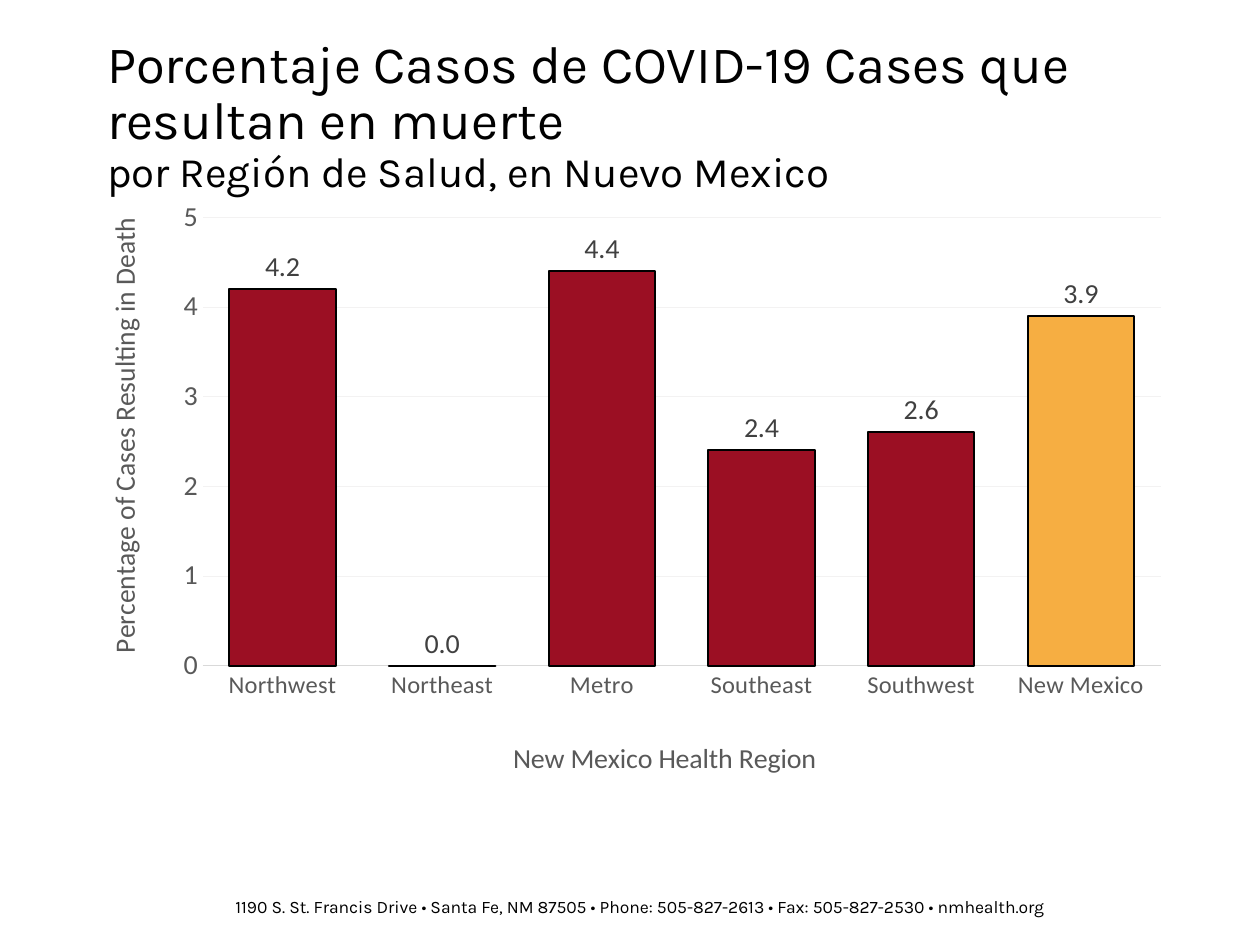
import pptx
import pptx.chart.data
import pptx.dml.color
import pptx.enum.chart
import pptx.enum.text
import pptx.oxml
import pptx.oxml.ns
import pptx.util

RGBColor = pptx.dml.color.RGBColor
BLACK = RGBColor(0x00, 0x00, 0x00)
AXIS_GREY = RGBColor(0x59, 0x59, 0x59)
LABEL_GREY = RGBColor(0x40, 0x40, 0x40)
LINE_GREY = RGBColor(0xD9, 0xD9, 0xD9)
GRID_GREY = RGBColor(0xF3, 0xF2, 0xF2)
REGION_RED = RGBColor(0x9B, 0x0F, 0x23)
STATE_GOLD = RGBColor(0xF6, 0xAE, 0x42)

DEATH_RATES = {
    "Northwest": 4.2,
    "Northeast": 0,
    "Metro": 4.4,
    "Southeast": 2.4,
    "Southwest": 2.6,
    "New Mexico": 3.9,
}


def set_layout(parent, target=None, **shares):
    """Place a plot area or axis title by shares of the chart's size."""
    qn = pptx.oxml.ns.qn
    for old in parent.findall(qn("c:layout")):
        parent.remove(old)
    modes = {"xMode": "edge", "yMode": "edge", **shares}
    if target:
        modes = {"layoutTarget": target, **modes}
    items = "".join(f'<c:{tag} val="{val}"/>' for tag, val in modes.items())
    layout = pptx.oxml.parse_xml(
        f'<c:layout {pptx.oxml.ns.nsdecls("c")}>'
        f"<c:manualLayout>{items}</c:manualLayout></c:layout>"
    )
    tx = parent.find(qn("c:tx"))
    parent.insert(0 if tx is None else parent.index(tx) + 1, layout)


class Deck:
    """Style and current slide; lengths are cells of a 40 by 30 grid."""

    HEAD_FONT = "Karla"
    CHART_FONT = "Calibri"
    CELL = pptx.util.Inches(0.25)

    def __init__(self):
        self.prs = pptx.Presentation()
        self.prs.slide_width = 40 * self.CELL
        self.prs.slide_height = 30 * self.CELL
        self.s = self.prs.slides.add_slide(self.prs.slide_layouts[5])

    def cells(self, *lengths):
        return [round(n * self.CELL) for n in lengths]

    def style(self, font, size, color, name):
        font.size = pptx.util.Pt(size)
        font.bold = False
        font.name = name
        font.color.rgb = color

    def run(self, p, text, size, color=BLACK, name=HEAD_FONT):
        r = p.add_run()
        r.text = text
        self.style(r.font, size, color, name)

    def title(self, heading, subheading, *box):
        sp = self.s.shapes.title
        sp.left, sp.top, sp.width, sp.height = self.cells(*box)
        tf = sp.text_frame
        tf.word_wrap = True
        tf.auto_size = pptx.enum.text.MSO_AUTO_SIZE.NONE
        tf.vertical_anchor = pptx.enum.text.MSO_ANCHOR.TOP
        p = tf.paragraphs[0]
        p.alignment = pptx.enum.text.PP_ALIGN.LEFT
        p.line_spacing = 0.9
        self.run(p, heading, 30)
        p.add_line_break()
        self.run(p, subheading, 24)

    def footer(self, text, *box):
        tf = self.s.shapes.add_textbox(*self.cells(*box)).text_frame
        tf.word_wrap = True
        self.run(tf.paragraphs[0], text, 10)

    def axis(self, axis, title, size, x, y, turned=False):
        axis.major_tick_mark = pptx.enum.chart.XL_TICK_MARK.NONE
        axis.minor_tick_mark = pptx.enum.chart.XL_TICK_MARK.NONE
        self.style(axis.tick_labels.font, size, AXIS_GREY, self.CHART_FONT)
        tf = axis.axis_title.text_frame
        self.run(tf.paragraphs[0], title, 16, AXIS_GREY, self.CHART_FONT)
        if turned:
            body = tf._txBody.bodyPr
            body.set("rot", "-5400000")
            body.set("vert", "horz")
        set_layout(axis.axis_title._element, x=x, y=y)

    def columns(self, rates, highlight, x_title, y_title, *box):
        data = pptx.chart.data.CategoryChartData()
        data.categories = list(rates)
        data.add_series("Series 1", list(rates.values()))
        kind = pptx.enum.chart.XL_CHART_TYPE.COLUMN_CLUSTERED
        chart = self.s.shapes.add_chart(kind, *self.cells(*box), data).chart
        chart.has_legend = False
        chart.has_title = False
        self.style(chart.font, 10, BLACK, self.HEAD_FONT)

        cat, val = chart.category_axis, chart.value_axis
        self.axis(cat, x_title, 14, 0.39, 0.93)
        cat.format.line.color.rgb = LINE_GREY
        cat.format.line.width = pptx.util.Pt(0.75)
        self.axis(val, y_title, 16, 0.02, 0.05, turned=True)
        val.format.line.fill.background()
        val.minimum_scale, val.maximum_scale, val.major_unit = 0, 5, 1
        val.tick_labels.number_format = "#,##0"
        val.tick_labels.number_format_is_linked = False
        val.has_major_gridlines = True
        val.major_gridlines.format.line.color.rgb = GRID_GREY
        val.major_gridlines.format.line.width = pptx.util.Pt(0.25)

        plot = chart.plots[0]
        plot.gap_width, plot.overlap = 50, -27
        plot.vary_by_categories = False
        series = plot.series[0]
        state = series.points[list(rates).index(highlight)]
        for part, color in ((series, REGION_RED), (state, STATE_GOLD)):
            part.format.fill.solid()
            part.format.fill.fore_color.rgb = color
            part.format.line.color.rgb = BLACK
            part.format.line.width = pptx.util.Pt(1.25)
        labels = series.data_labels
        labels.show_value = True
        labels.position = pptx.enum.chart.XL_LABEL_POSITION.OUTSIDE_END
        labels.number_format = "#,##0.0"
        labels.number_format_is_linked = False
        self.style(labels.font, 16, LABEL_GREY, self.CHART_FONT)
        plot_area = chart._chartSpace.chart.plotArea
        set_layout(plot_area, "inner", x=0.113, y=0.046, w=0.869, h=0.766)


def main():
    deck = Deck()
    deck.footer(
        "1190 S. St. Francis Drive • Santa Fe, NM 87505 • Phone: 505-827-2613"
        " • Fax: 505-827-2530 • nmhealth.org",
        7.08, 28.24, 32.8, 1.08,
    )
    deck.columns(
        DEATH_RATES, "New Mexico",
        "New Mexico Health Region", "Percentage of Cases Resulting in Death",
        2.48, 6.04, 35, 18.88,
    )
    deck.title(
        "Porcentaje Casos de COVID-19 Cases que resultan en muerte",
        "por Región de Salud, en Nuevo Mexico",
        3, 1, 34, 7.08,
    )
    deck.prs.save("out.pptx")


if __name__ == "__main__":
    main()
